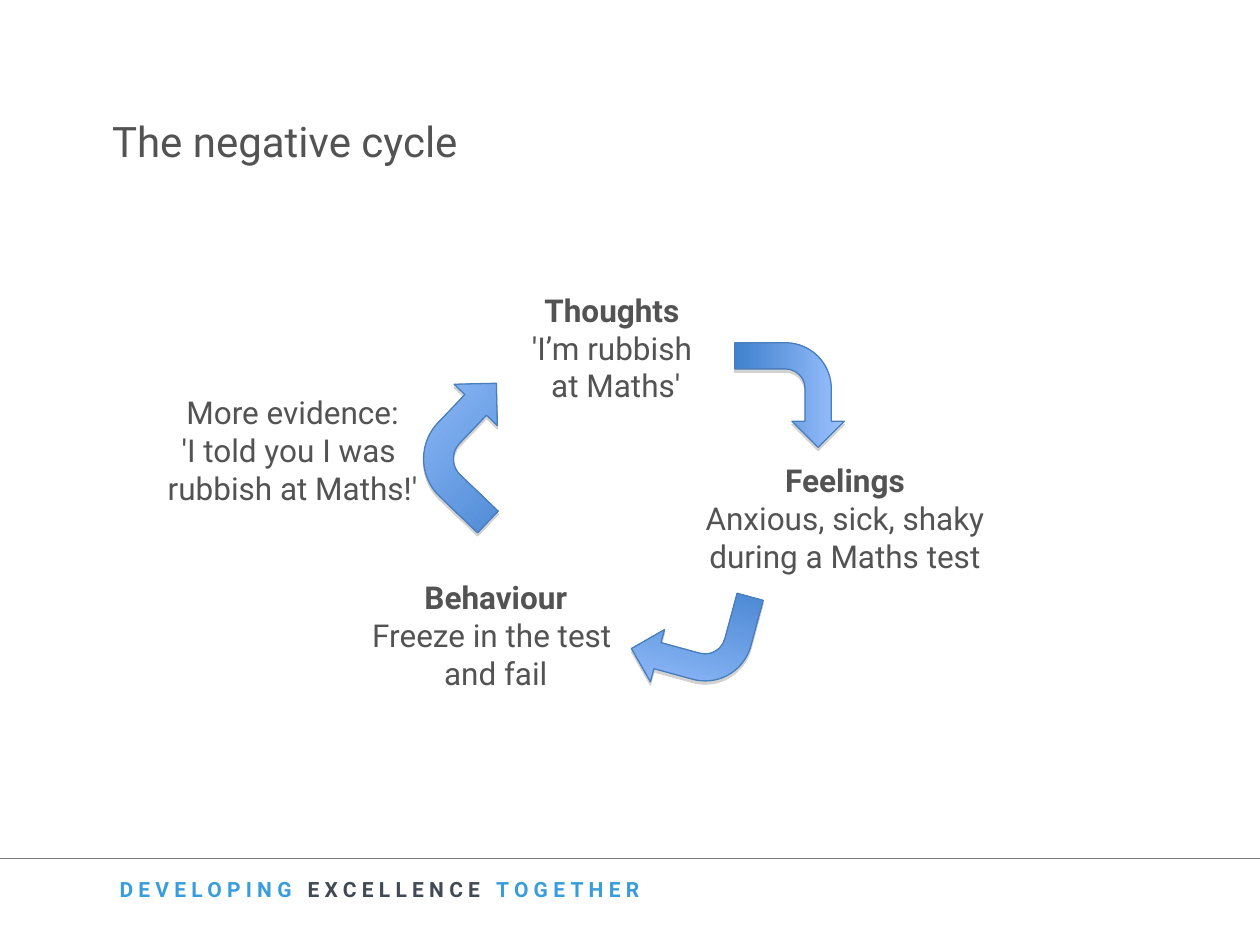
from lxml.etree import SubElement
from pptx import Presentation
from pptx.dml.color import RGBColor
from pptx.enum.shapes import MSO_CONNECTOR, MSO_SHAPE
from pptx.enum.text import MSO_ANCHOR, PP_ALIGN
from pptx.oxml.ns import qn
from pptx.util import Cm, Pt

GREY = RGBColor(0x53, 0x53, 0x53)
RULE = RGBColor(0x78, 0x79, 0x79)
SKY = RGBColor(0x39, 0x9D, 0xDC)
SLATE = RGBColor(0x41, 0x49, 0x54)
ARROW_LIGHT = RGBColor(0x9B, 0xC1, 0xFF)
ARROW_DARK = RGBColor(0x3F, 0x80, 0xCD)
ARROW_EDGE = RGBColor(0x4A, 0x7E, 0xBB)


class CycleSlide:
    font = "Roboto"

    def __init__(self, prs):
        self.s = prs.slides.add_slide(prs.slide_layouts[6])

    def text(self, x, y, w, h, lines, size=18, align=PP_ALIGN.CENTER,
             anchor=MSO_ANCHOR.TOP, spacing=None):
        tf = self.s.shapes.add_textbox(Cm(x), Cm(y), Cm(w), Cm(h)).text_frame
        tf.word_wrap = True
        tf.vertical_anchor = anchor
        for i, line in enumerate(lines):
            p = tf.add_paragraph() if i else tf.paragraphs[0]
            p.alignment = align
            for words, color, bold in line:
                r = p.add_run()
                r.text = words
                style = {"name": self.font, "size": Pt(size), "bold": bold}
                for key, value in style.items():
                    setattr(r.font, key, value)
                r.font.color.rgb = color
                if spacing:
                    r._r.get_or_add_rPr().set("spc", str(spacing * 100))

    def step(self, x, y, w, heading, *body):
        lines = [[(heading, GREY, True)]] if heading else []
        lines += [[(words, GREY, False)] for words in body]
        self.text(x, y, w, 2.57, lines)

    def rule(self, y, width):
        line = self.s.shapes.add_connector(
            MSO_CONNECTOR.STRAIGHT, Cm(0), Cm(y), Cm(width), Cm(y))
        line.line.color.rgb = RULE
        line.line.width = Pt(0.75)
        SubElement(line._element.spPr, qn("a:effectLst"))

    def arrow(self, x, y, w, h, rotation):
        sp = self.s.shapes.add_shape(
            MSO_SHAPE.BENT_ARROW, Cm(x), Cm(y), Cm(w), Cm(h))
        sp.rotation = rotation
        sp.fill.gradient()
        sp.fill.gradient_angle = 270
        stops = zip(sp.fill.gradient_stops, (ARROW_LIGHT, ARROW_DARK))
        for position, (stop, color) in enumerate(stops):
            stop.position = position
            stop.color.rgb = color
        sp.line.color.rgb = ARROW_EDGE
        sp.line.width = Pt(0.75)
        sp.shadow.inherit = False
        effects = sp._element.spPr.find(qn("a:effectLst"))
        shadow = SubElement(effects, qn("a:outerShdw"), blurRad="0",
                            dist=str(Pt(1.8)), dir="5400000", rotWithShape="0")
        color = SubElement(shadow, qn("a:srgbClr"), val="808080")
        SubElement(color, qn("a:alpha"), val="35000")


def main():
    prs = Presentation()
    prs.slide_width, prs.slide_height = Cm(25.4), Cm(19.05)
    s = CycleSlide(prs)
    s.rule(17.3, 25.4)
    s.text(2.16, 17.55, 13.82, 1.12,
           [[("DEVELOPING", SKY, True), (" EXCELLENCE ", SLATE, True),
             ("TOGETHER", SKY, True)]],
           size=12, align=PP_ALIGN.LEFT, spacing=3)
    s.text(2.01, 1.5, 22.86, 2.67, [[("The negative cycle", GREY, False)]],
           size=24, align=PP_ALIGN.LEFT, anchor=MSO_ANCHOR.MIDDLE)
    s.step(8.92, 5.74, 6.99, "Thoughts ", "'I’m rubbish ", "at Maths'")
    s.step(13.54, 9.17, 6.99, "Feelings",
           "Anxious, sick, shaky during a Maths test")
    s.step(6.5, 11.53, 6.99, "Behaviour", "Freeze in the test ", "and fail")
    s.step(3.1, 7.8, 5.6, None,
           "More evidence:", "'I told you I was ", "rubbish at Maths!'")
    s.arrow(14.86, 6.86, 2.11, 2.21, 90)
    s.arrow(12.83, 11.76, 2.31, 2.18, 195.2)
    s.arrow(8.38, 7.82, 2.44, 2.41, 313.7)
    prs.save("out.pptx")


if __name__ == "__main__":
    main()
